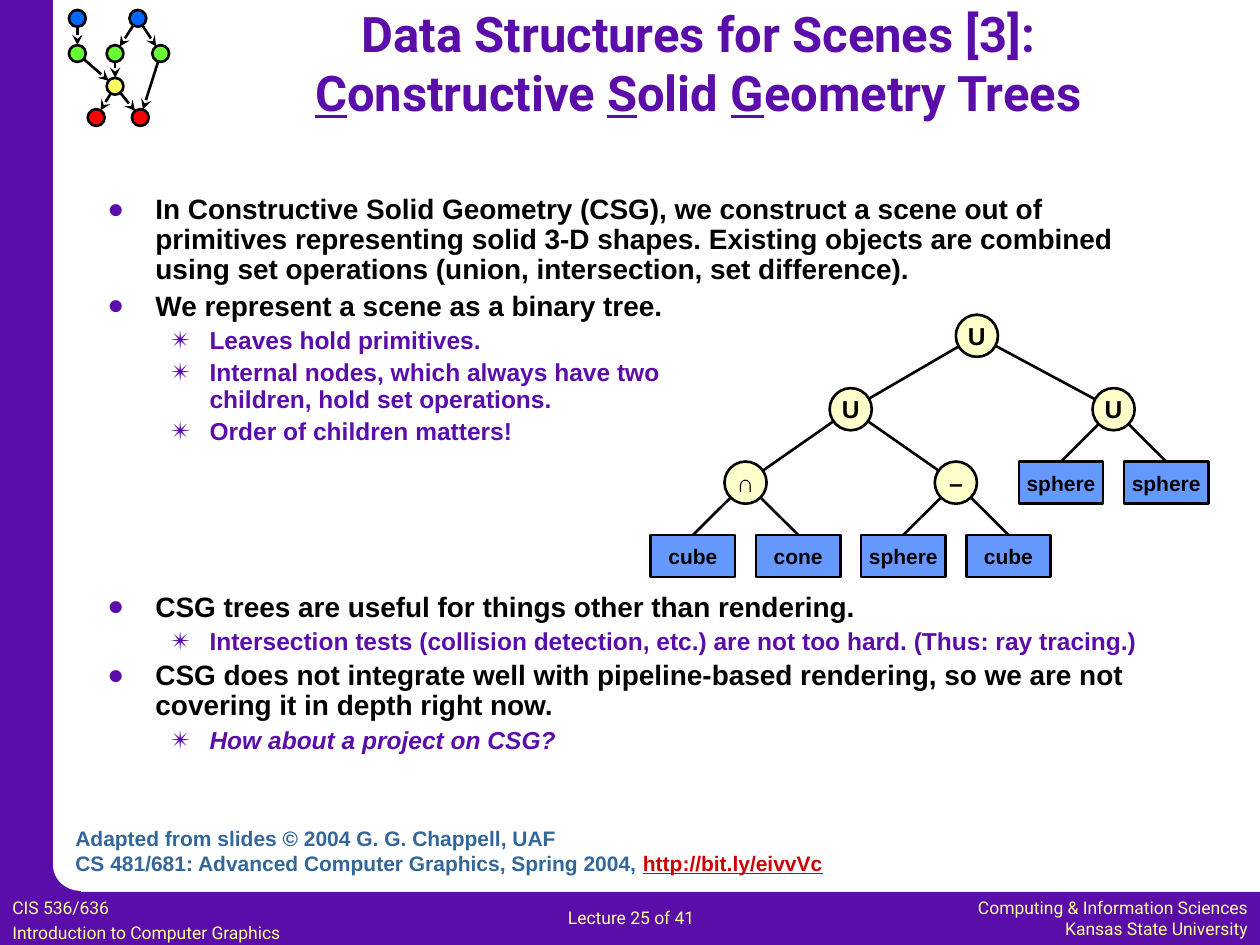
import math

import lxml.etree
import pptx
import pptx.dml.color
import pptx.enum.shapes
import pptx.enum.text
import pptx.oxml
import pptx.oxml.ns
import pptx.shapes.connector
import pptx.util

Cm, Pt = pptx.util.Cm, pptx.util.Pt
RGB = pptx.dml.color.RGBColor
SHAPE = pptx.enum.shapes.MSO_SHAPE
STRAIGHT = pptx.enum.shapes.MSO_CONNECTOR.STRAIGHT
ALIGN = pptx.enum.text.PP_ALIGN
ANCHOR = pptx.enum.text.MSO_ANCHOR
qn = pptx.oxml.ns.qn

PURPLE = RGB(0x5B, 0x0D, 0xAA)
WHITE = RGB(0xFF, 0xFF, 0xFF)
BLACK = RGB(0, 0, 0)
FOOTER = RGB(0xFF, 0xFF, 0x99)
GREEN = RGB(0x66, 0xFF, 0x33)
BLUE = RGB(0x00, 0x66, 0xFF)
YELLOW = RGB(0xFF, 0xFF, 0x66)
RED = RGB(0xFF, 0, 0)
CREAM = RGB(0xFF, 0xFF, 0xCC)
LEAF_BLUE = RGB(0x66, 0x99, 0xFF)
CREDIT = RGB(0x33, 0x66, 0x99)
LINK = RGB(0xCC, 0, 0)

prs = pptx.Presentation()
prs.slide_width, prs.slide_height = Cm(25.4), Cm(19.05)
slide = prs.slides.add_slide(prs.slide_layouts[1])


def add_text(p, text, size, color, font="Arial", bold=True, italic=False,
             underline=False, align=ALIGN.LEFT, before=0):
    p.alignment = align
    p.space_before = Pt(before)
    for i, line in enumerate(text.split("\n")):
        if i:
            p.add_line_break()
        r = p.add_run()
        r.text = line
        r.font.name, r.font.size, r.font.color.rgb = font, Pt(size), color
        r.font.bold, r.font.italic, r.font.underline = bold, italic, underline


def add_box(kind, x, y, w, h, fill, outlined=False):
    s = slide.shapes.add_shape(kind, Cm(x), Cm(y), Cm(w), Cm(h))
    s.shadow.inherit = False
    s.fill.solid()
    s.fill.fore_color.rgb = fill
    if outlined:
        s.line.color.rgb = BLACK
        s.line.width = Pt(1.5)
    else:
        s.line.fill.background()
    return s


# Purple frame with a rounded inner corner
add_box(SHAPE.RECTANGLE, 0, 17.98, 25.4, 1.07, PURPLE)
add_box(SHAPE.RECTANGLE, 0, 0, 1.07, 19.05, PURPLE)
add_box(SHAPE.RECTANGLE, 0.51, 17.4, 1.12, 1.12, PURPLE)
add_box(SHAPE.OVAL, 1.07, 16.92, 1.12, 1.04, WHITE)

# Small directed graph in the corner
vertices = [(1.56, 0.37, BLUE), (2.78, 0.37, BLUE), (1.56, 1.08, GREEN),
            (2.32, 1.08, GREEN), (3.24, 1.08, GREEN), (2.32, 1.74, YELLOW),
            (1.94, 2.37, RED), (2.83, 2.37, RED)]
arrows = [(0, 2), (1, 3), (1, 4), (2, 5), (3, 5), (4, 7), (5, 7), (5, 6)]
radius = 0.17
for x, y, color in vertices:
    add_box(SHAPE.OVAL, x - radius, y - radius, 2 * radius, 2 * radius, color, True)
for a, b in arrows:
    (x1, y1, _), (x2, y2, _) = vertices[a], vertices[b]
    length = math.hypot(x2 - x1, y2 - y1)
    dx, dy = radius * (x2 - x1) / length, radius * (y2 - y1) / length
    s = slide.shapes.add_connector(STRAIGHT, Cm(x1 + dx), Cm(y1 + dy),
                                   Cm(x2 - dx), Cm(y2 - dy))
    lxml.etree.SubElement(s.line._get_or_add_ln(), qn("a:tailEnd"), type="stealth")

# Title
s = slide.shapes.title
s.left, s.top, s.width, s.height = Cm(3.18), Cm(0.2), Cm(21.79), Cm(2.12)
tf = s.text_frame
tf.auto_size = pptx.enum.text.MSO_AUTO_SIZE.NONE
tf.vertical_anchor = ANCHOR.MIDDLE
heading = dict(size=28, color=PURPLE, font="Roboto", align=ALIGN.CENTER)
add_text(tf.paragraphs[0], "Data Structures for Scenes [3]:", **heading)
p = tf.add_paragraph()
for word in ["Constructive ", "Solid ", "Geometry Trees"]:
    add_text(p, word[0], underline=True, **heading)
    add_text(p, word[1:], **heading)

# Bulleted list: level, space before, text
items = [
    (0, 0, "In Constructive Solid Geometry (CSG), we construct a scene out of "
     "primitives representing solid 3-D shapes. Existing objects are combined "
     "using set operations (union, intersection, set difference)."),
    (0, 3.4, "We represent a scene as a binary tree."),
    (1, 3.4, "Leaves hold primitives."),
    (1, 3.4, "Internal nodes, which always have two\nchildren, hold set operations."),
    (1, 3.4, "Order of children matters!"),
    (0, 84, "CSG trees are useful for things other than rendering."),
    (1, 3.4, "Intersection tests (collision detection, etc.) are not too hard. "
     "(Thus: ray tracing.)"),
    (0, 3.4, "CSG does not integrate well with pipeline-based rendering, so we are "
     "not covering it in depth right now."),
    (1, 3.4, "How about a project on CSG?"),
]
levels = [dict(size=16, color=BLACK, margin=0.97, hang=0.97, bullet="●"),
          dict(size=14, color=PURPLE, margin=2.06, hang=0.79, bullet="✴")]
s = slide.placeholders[1]
s.left, s.top, s.width, s.height = Cm(1.91), Cm(3.81), Cm(22.07), Cm(12.07)
tf = s.text_frame
tf.auto_size = pptx.enum.text.MSO_AUTO_SIZE.NONE
for i, (level, before, text) in enumerate(items):
    p = tf.add_paragraph() if i else tf.paragraphs[0]
    look = levels[level]
    p.level = level
    p.line_spacing = 0.9
    pPr = p._p.get_or_add_pPr()
    pPr.set("marL", str(Cm(look["margin"])))
    pPr.set("indent", str(-Cm(look["hang"])))
    buClr = lxml.etree.SubElement(pPr, qn("a:buClr"))
    lxml.etree.SubElement(buClr, qn("a:srgbClr"), val=str(PURPLE))
    lxml.etree.SubElement(pPr, qn("a:buChar"), char=look["bullet"])
    add_text(p, text, look["size"], look["color"], before=before,
             italic=i == len(items) - 1)

# CSG tree on a grid: (column, row) of each node
left, top, col_step, row_step = 13.97, 6.77, 1.06, 1.48
node, leaf_w = 0.85, 1.7
leaves = {(0, 3): "cube", (2, 3): "cone", (4, 3): "sphere", (6, 3): "cube",
          (7, 2): "sphere", (9, 2): "sphere"}
operations = {(5.4, 0): "U", (3, 1): "U", (8, 1): "U", (1, 2): "∩", (5, 2): "–"}
children = {(5.4, 0): [(3, 1), (8, 1)], (3, 1): [(1, 2), (5, 2)],
            (8, 1): [(7, 2), (9, 2)], (1, 2): [(0, 3), (2, 3)],
            (5, 2): [(4, 3), (6, 3)]}
centers = {(c, r): (left + c * col_step, top + r * row_step)
           for c, r in [*leaves, *operations]}
labels = []
leaf_boxes = {}
for spot, text in leaves.items():
    x, y = centers[spot]
    s = add_box(SHAPE.RECTANGLE, x - leaf_w / 2, y - node / 2, leaf_w, node,
                LEAF_BLUE, True)
    leaf_boxes[spot] = s
    labels.append((s, text, 12))
for parent, pair in children.items():
    for child in pair:
        s = slide.shapes.add_connector(
            STRAIGHT, *[Cm(v) for v in centers[parent] + centers[child]])
        if child in leaf_boxes:
            s.end_connect(leaf_boxes[child], 0)
for spot, text in operations.items():
    x, y = centers[spot]
    s = add_box(SHAPE.OVAL, x - node / 2, y - node / 2, node, node, CREAM, True)
    labels.append((s, text, 14))
for s, text, size in labels:
    tf = s.text_frame
    tf.word_wrap = False
    tf.vertical_anchor = ANCHOR.MIDDLE
    add_text(tf.paragraphs[0], text, size, BLACK, align=ALIGN.CENTER)

# Common look of all connectors
for s in slide.shapes:
    if isinstance(s, pptx.shapes.connector.Connector):
        s.line.color.rgb = BLACK
        s.line.width = Pt(1.5)
        lxml.etree.SubElement(s._element.spPr, qn("a:effectLst"))

# Footer and credit: place, alignment, space between lines, format, lines of runs
small = dict(size=10, color=FOOTER, font="Roboto", bold=False)
credit = dict(size=12, color=CREDIT)
link = dict(size=12, color=LINK, underline=True)
boxes = [
    (0, 17.96, 8, 1.1, ALIGN.LEFT, 2,
     [[("CIS 536/636", small)], [("Introduction to Computer Graphics", small)]]),
    (11.2, 18.16, 4.5, 0.69, ALIGN.LEFT, 0, [[("Lecture 25 of 41", small)]]),
    (17.4, 17.96, 8, 1.1, ALIGN.RIGHT, 0,
     [[("Computing & Information Sciences", small)],
      [("Kansas State University", small)]]),
    (1.27, 16.51, 17, 1.27, ALIGN.LEFT, 0,
     [[("Adapted from slides © 2004 G. G. Chappell, UAF", credit)],
      [("CS 481/681: Advanced Computer Graphics, Spring 2004, ", credit),
       ("http://bit.ly/eivvVc", link)]]),
]
for x, y, w, h, align, gap, lines in boxes:
    tf = slide.shapes.add_textbox(Cm(x), Cm(y), Cm(w), Cm(h)).text_frame
    tf.word_wrap = True
    for i, runs in enumerate(lines):
        p = tf.add_paragraph() if i else tf.paragraphs[0]
        for text, look in runs:
            add_text(p, text, align=align, before=gap if i else 0, **look)

prs.save("out.pptx")
